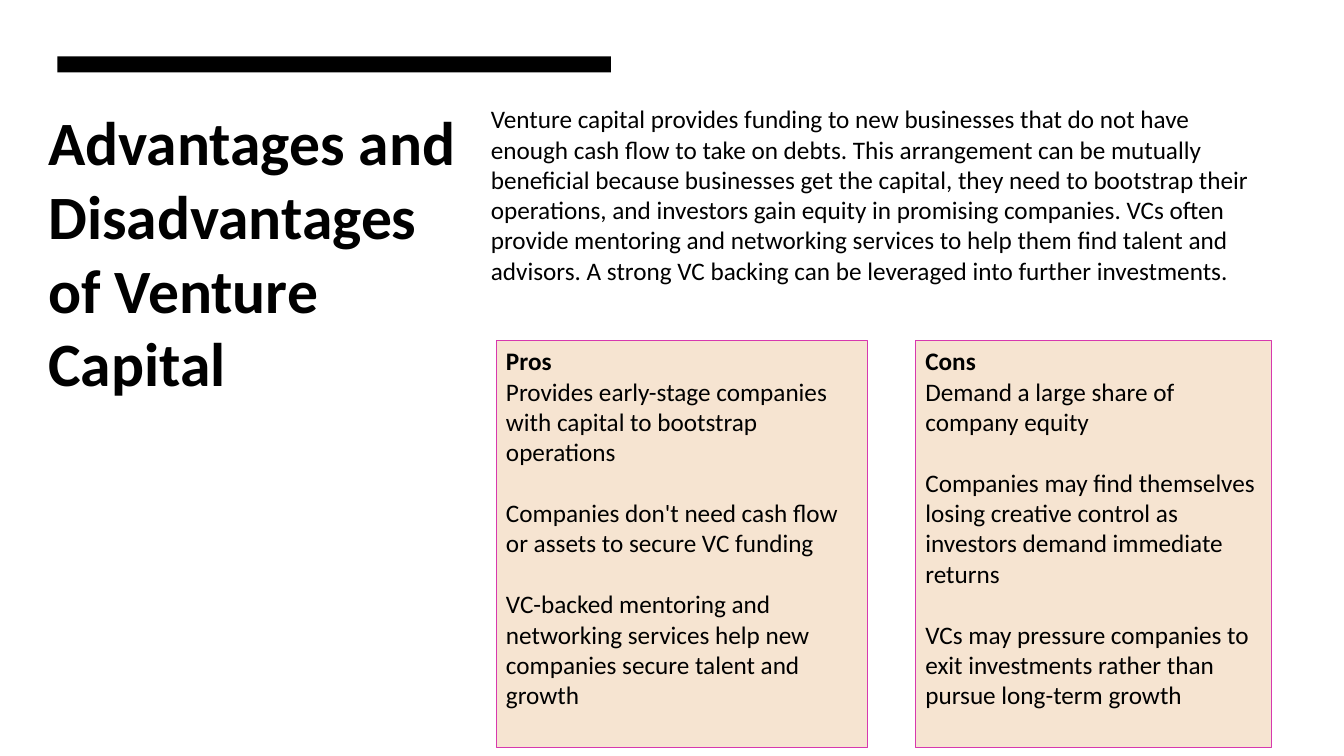
import pptx
import pptx.util
import pptx.dml.color
import pptx.enum.shapes
import pptx.enum.text

TITLE = "Advantages and Disadvantages of Venture Capital"
INTRODUCTION = (
    "Venture capital provides funding to new businesses that do not have enough cash flow "
    "to take on debts. This arrangement can be mutually beneficial because businesses get "
    "the capital, they need to bootstrap their operations, and investors gain equity in "
    "promising companies. VCs often provide mentoring and networking services to help them "
    "find talent and advisors. A strong VC backing can be leveraged into further investments."
)
CARDS = [
    ("Pros", [
        "Provides early-stage companies with capital to bootstrap operations",
        "Companies don't need cash flow or assets to secure VC funding",
        "VC-backed mentoring and networking services help new companies secure talent and growth",
    ]),
    ("Cons", [
        "Demand a large share of company equity",
        "Companies may find themselves losing creative control as investors demand immediate returns",
        "VCs may pressure companies to exit investments rather than pursue long-term growth",
    ]),
]

COLORS = {"ink": "000000", "card": "F6E4D1", "border": "D739AE"}
FONT = "Calibri"
BODY_SIZE, TITLE_SIZE = 18, 44
POINT_GAP = 22  # one body line

# Inches
SLIDE_WIDTH, SLIDE_HEIGHT = 13.33, 7.5
TEXT_TOP = 0.98
BAR = (0.57, 0.56, 5.49, 0.16)
TITLE_BOX = (0.38, TEXT_TOP, 4.35, 5.33)
INTRODUCTION_BOX = (4.77, TEXT_TOP, 7.88, 2.22)
CARD_LEFT, CARD_TOP, CARD_HEIGHT, CARD_GAP = 4.92, 3.38, 4.04, 0.48
CARD_WIDTHS = (3.68, 3.53)


def color(name):
    return pptx.dml.color.RGBColor.from_string(COLORS[name])


def inches(box):
    return [pptx.util.Inches(length) for length in box]


def add_rectangle(slide, box, fill, border=None):
    shape = slide.shapes.add_shape(pptx.enum.shapes.MSO_SHAPE.RECTANGLE, *inches(box))
    shape.shadow.inherit = False
    shape.fill.solid()
    shape.fill.fore_color.rgb = color(fill)
    if border:
        shape.line.color.rgb = color(border)
        shape.line.width = pptx.util.Pt(0.75)
    else:
        shape.line.fill.background()
    return shape


def write(shape, lines):
    """Fill a shape with (text, size, bold, space after) paragraphs."""
    frame = shape.text_frame
    frame.word_wrap = True
    frame.vertical_anchor = pptx.enum.text.MSO_ANCHOR.TOP
    for index, (text, size, bold, gap) in enumerate(lines):
        paragraph = frame.add_paragraph() if index else frame.paragraphs[0]
        paragraph.alignment = pptx.enum.text.PP_ALIGN.LEFT
        paragraph.space_after = pptx.util.Pt(gap)
        run = paragraph.add_run()
        run.text = text
        run.font.color.rgb = color("ink")
        formats = {"name": FONT, "size": pptx.util.Pt(size), "bold": bold}
        for attribute, value in formats.items():
            setattr(run.font, attribute, value)


def main():
    presentation = pptx.Presentation()
    presentation.slide_width, presentation.slide_height = inches((SLIDE_WIDTH, SLIDE_HEIGHT))
    slide = presentation.slides.add_slide(presentation.slide_layouts[6])

    add_rectangle(slide, BAR, "ink")
    write(slide.shapes.add_textbox(*inches(TITLE_BOX)), [(TITLE, TITLE_SIZE, True, 0)])

    left = CARD_LEFT
    for (heading, points), width in zip(CARDS, CARD_WIDTHS):
        card = add_rectangle(slide, (left, CARD_TOP, width, CARD_HEIGHT), "card", "border")
        lines = [(heading, BODY_SIZE, True, 0)]
        lines += [(point, BODY_SIZE, False, POINT_GAP) for point in points[:-1]]
        lines.append((points[-1], BODY_SIZE, False, 0))
        write(card, lines)
        left += width + CARD_GAP

    introduction = slide.shapes.add_textbox(*inches(INTRODUCTION_BOX))
    write(introduction, [(INTRODUCTION, BODY_SIZE, False, 0)])
    presentation.save("out.pptx")


if __name__ == "__main__":
    main()
